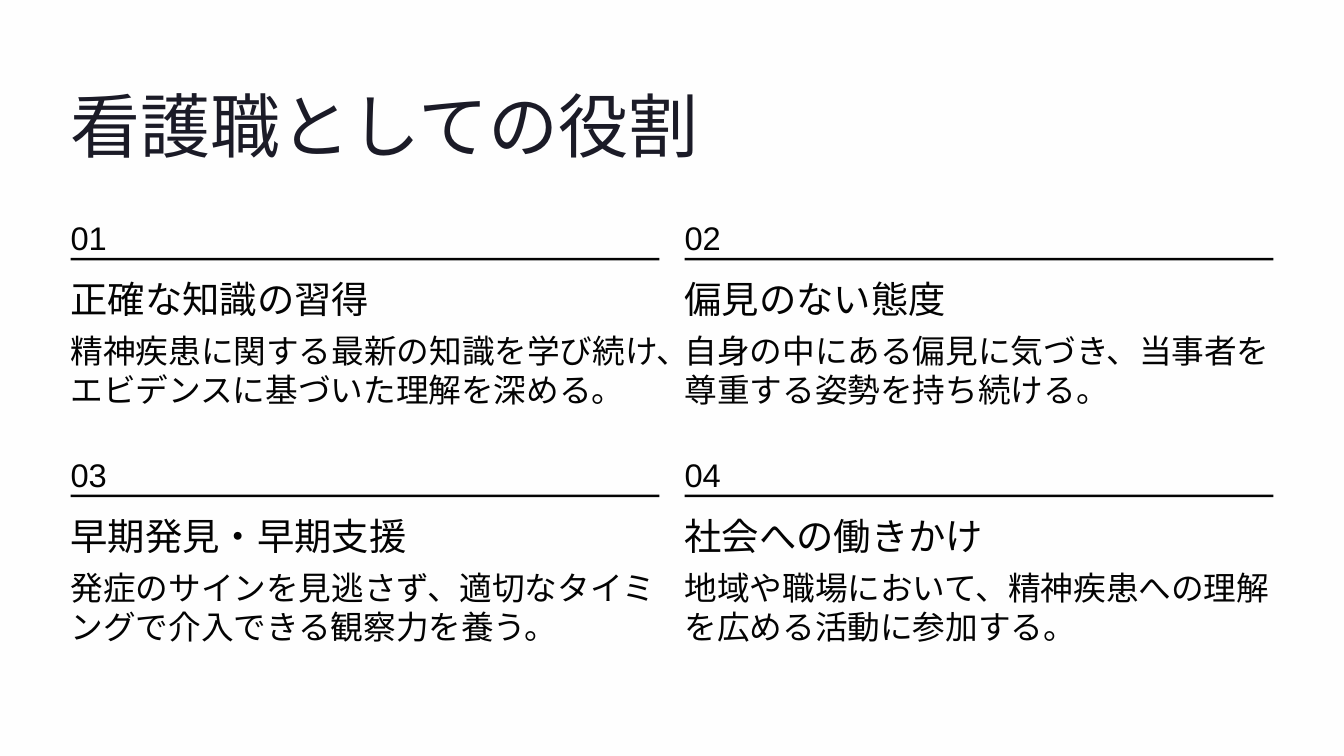
import lxml.etree
import pptx
import pptx.dml.color
import pptx.enum.lang
import pptx.enum.shapes
import pptx.oxml.ns
import pptx.util

Inches = pptx.util.Inches
Pt = pptx.util.Pt
RGBColor = pptx.dml.color.RGBColor
qn = pptx.oxml.ns.qn

BLACK = RGBColor(0x00, 0x00, 0x00)
LAVENDER = RGBColor(0xEC, 0xEC, 0xF3)
WHITE = RGBColor(0xFF, 0xFF, 0xFF)
TITLE_INK = RGBColor(0x1B, 0x1B, 0x27)
INK = RGBColor(0x03, 0x03, 0x03)

PAGE_WIDTH, PAGE_HEIGHT = 16, 9
LEFT, TOP = 0.84, 2.6
COLUMN_STEP, ROW_STEP = 7.31, 2.82
COLUMN_WIDTH = 7.01

ROLES = [
    ("正確な知識の習得",
     "精神疾患に関する最新の知識を学び続け、エビデンスに基づいた理解を深める。"),
    ("偏見のない態度",
     "自身の中にある偏見に気づき、当事者を尊重する姿勢を持ち続ける。"),
    ("早期発見・早期支援",
     "発症のサインを見逃さず、適切なタイミングで介入できる観察力を養う。"),
    ("社会への働きかけ",
     "地域や職場において、精神疾患への理解を広める活動に参加する。"),
]


def add_text(page, text, left, top, width, height, size, font_name,
             color=INK, line_spacing=None):
    box = page.shapes.add_textbox(
        Inches(left), Inches(top), Inches(width), Inches(height))
    frame = box.text_frame
    frame.margin_left = frame.margin_right = 0
    frame.margin_top = frame.margin_bottom = 0
    frame.word_wrap = True
    para = frame.paragraphs[0]
    para.text = text
    para.line_spacing = line_spacing
    font = para.font
    font.size = Pt(size)
    font.name = font_name
    font.color.rgb = color
    font.language_id = pptx.enum.lang.MSO_LANGUAGE_ID.JAPANESE
    defaults = para._p.pPr.find(qn("a:defRPr"))
    lxml.etree.SubElement(defaults, qn("a:ea")).set("typeface", font_name)


def add_panel(page, left, top, width, height, color, opacity=100):
    panel = page.shapes.add_shape(
        pptx.enum.shapes.MSO_SHAPE.RECTANGLE,
        Inches(left), Inches(top), Inches(width), Inches(height))
    panel.shadow.inherit = False
    panel.fill.solid()
    panel.fill.fore_color.rgb = color
    panel.line.fill.background()
    if opacity < 100:
        shade = panel._element.spPr.find(qn("a:solidFill"))[0]
        alpha = lxml.etree.SubElement(shade, qn("a:alpha"))
        alpha.set("val", str(opacity * 1000))


def add_role(page, index, heading, body):
    row, column = divmod(index, 2)
    left = LEFT + column * COLUMN_STEP
    top = TOP + row * ROW_STEP
    add_text(page, f"{index + 1:02}", left, top - 0.01, 0.6, 0.37, 28, "Arial")
    add_panel(page, left, top + 0.47, COLUMN_WIDTH, 0.03, INK)
    add_text(page, heading, left, top + 0.69, 4.5, 0.47, 32, "Inter")
    add_text(page, body, left, top + 1.34, COLUMN_WIDTH, 0.96, 28, "Karla")


def main():
    deck = pptx.Presentation()
    deck.slide_width = Inches(PAGE_WIDTH)
    deck.slide_height = Inches(PAGE_HEIGHT)
    page = deck.slides.add_slide(deck.slide_layouts[6])
    page.background.fill.solid()
    page.background.fill.fore_color.rgb = BLACK
    add_panel(page, 0, 0, PAGE_WIDTH, PAGE_HEIGHT, LAVENDER)
    add_panel(page, 0, 0, PAGE_WIDTH, PAGE_HEIGHT, WHITE, opacity=95)
    add_text(page, "看護職としての役割", LEFT, 1.05, 7.6, 0.93, 60, "Inter",
             color=TITLE_INK, line_spacing=Pt(67))
    for index, (heading, body) in enumerate(ROLES):
        add_role(page, index, heading, body)
    deck.save("out.pptx")


if __name__ == "__main__":
    main()
